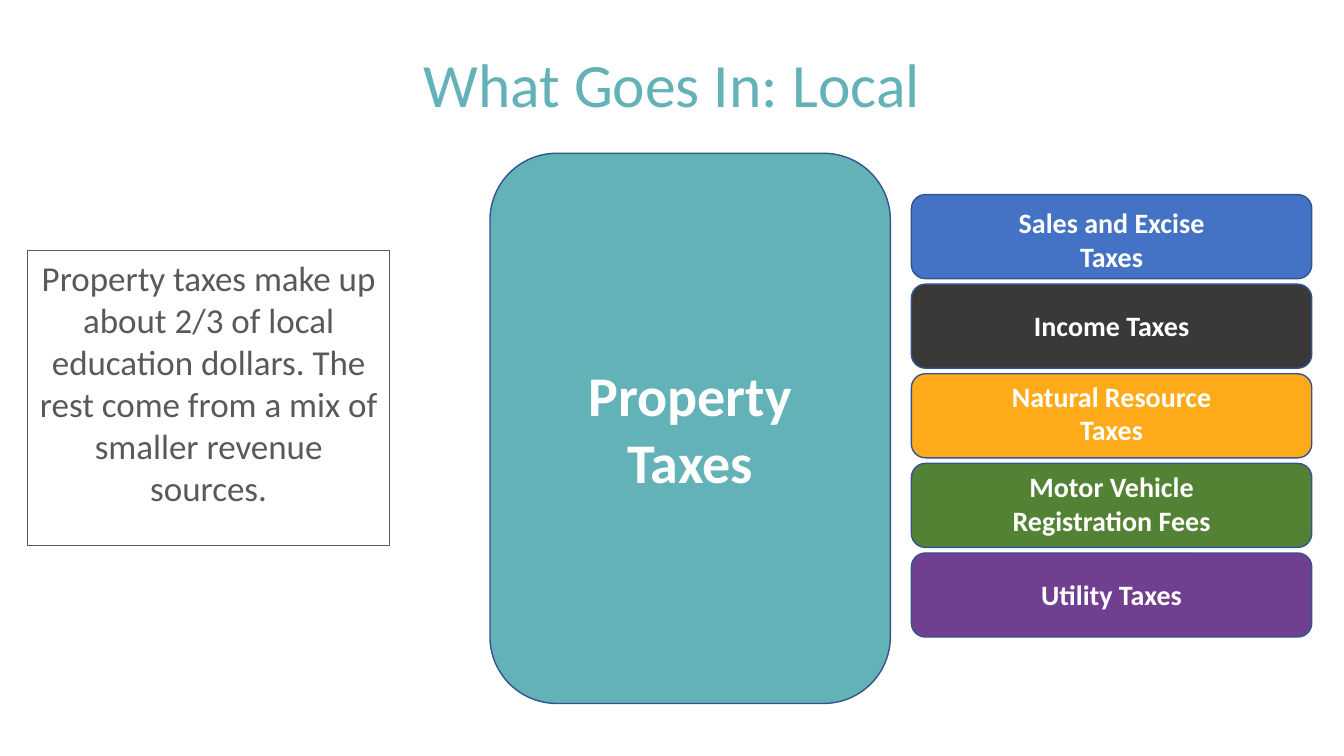
from dataclasses import dataclass

from pptx import Presentation
from pptx.dml.color import RGBColor
from pptx.enum.shapes import MSO_SHAPE
from pptx.enum.text import MSO_ANCHOR, MSO_AUTO_SIZE, PP_ALIGN
from pptx.util import Pt

CENTER = PP_ALIGN.CENTER
MIDDLE = MSO_ANCHOR.MIDDLE
FIT_SHAPE = MSO_AUTO_SIZE.SHAPE_TO_FIT_TEXT
NO_FIT = MSO_AUTO_SIZE.NONE
RECTANGLE = MSO_SHAPE.RECTANGLE
ROUNDED = MSO_SHAPE.ROUNDED_RECTANGLE
TITLE_ONLY = 5


@dataclass(frozen=True)
class Theme:
    font: str = "Calibri"
    teal: str = "63B2B8"
    blue: str = "4472C4"
    charcoal: str = "3B3838"
    amber: str = "FFAA19"
    green: str = "548235"
    purple: str = "703F8F"
    outline: str = "325491"
    gray: str = "595959"
    white: str = "FFFFFF"
    title_size: float = 44
    panel_size: float = 40
    note_size: float = 25
    card_size: float = 20


class SlideBuilder:
    def __init__(self, slide, theme):
        self.slide = slide
        self.theme = theme

    def set_text(self, frame, text, size, color, bold=False):
        frame.word_wrap = True
        para = frame.paragraphs[0]
        para.text = text
        para.alignment = CENTER
        para.font.name = self.theme.font
        para.font.size = Pt(size)
        para.font.bold = bold
        para.font.color.rgb = RGBColor.from_string(color)
        return para

    def title(self, text, left, top, width, height):
        box = self.slide.shapes.title
        box.left, box.top, box.width, box.height = map(Pt, (left, top, width, height))
        frame = box.text_frame
        frame.auto_size = NO_FIT
        frame.vertical_anchor = MIDDLE
        para = self.set_text(frame, text, self.theme.title_size, self.theme.teal)
        para.line_spacing = 0.9

    def block(self, kind, left, top, width, height, line, line_width, fill=None):
        shape = self.slide.shapes.add_shape(kind, *map(Pt, (left, top, width, height)))
        shape.shadow.inherit = False
        if fill:
            shape.fill.solid()
            shape.fill.fore_color.rgb = RGBColor.from_string(fill)
        else:
            shape.fill.background()
        shape.line.color.rgb = RGBColor.from_string(line)
        shape.line.width = Pt(line_width)
        return shape

    def label(self, text, center_x, center_y, width, height, size):
        left, top = center_x - width / 2, center_y - height / 2
        box = self.slide.shapes.add_textbox(*map(Pt, (left, top, width, height)))
        box.text_frame.auto_size = FIT_SHAPE
        self.set_text(box.text_frame, text, size, self.theme.white, bold=True)

    def card(self, text, left, top, width, height, fill, size,
             label_width, label_height, nudge=0):
        self.block(ROUNDED, left, top, width, height, self.theme.outline, 1, fill)
        self.label(text, left + width / 2, top + height / 2 + nudge,
                   label_width, label_height, size)

    def note(self, text, left, top, width, height):
        box = self.block(RECTANGLE, left, top, width, height, self.theme.gray, 0.75)
        frame = box.text_frame
        frame.vertical_anchor = MIDDLE
        frame.margin_left = frame.margin_right = Pt(7.2)
        frame.margin_top, frame.margin_bottom = Pt(3.6), Pt(25.6)
        self.set_text(frame, text, self.theme.note_size, self.theme.gray)


def main():
    theme = Theme()
    deck = Presentation()
    deck.slide_width, deck.slide_height = Pt(960), Pt(540)
    page = SlideBuilder(deck.slides.add_slide(deck.slide_layouts[TITLE_ONLY]), theme)

    page.title("What Goes In: Local", 0, 16, 960, 93.5)

    # Main revenue source
    card_width = 286
    page.card("Property Taxes", 350, 109.5, card_width, 393, theme.teal,
              theme.panel_size, label_width=173, label_height=104.4)

    # Smaller sources: text, fill, label width, label height, vertical nudge
    one_line, two_lines = 31.7, 55.4
    sources = [
        ("Sales and Excise Taxes", theme.blue, 173, two_lines, 2),
        ("Income Taxes", theme.charcoal, 173, one_line, 0),
        ("Natural Resource Taxes", theme.amber, 173, two_lines, -2),
        ("Motor Vehicle Registration Fees", theme.green, 227, two_lines, -1.5),
        ("Utility Taxes", theme.purple, 173, one_line, 0),
    ]
    first_top, pitch = 139, 64
    for row, (text, fill, label_width, label_height, nudge) in enumerate(sources):
        page.card(text, 651, first_top + row * pitch, card_width, 60, fill,
                  theme.card_size, label_width, label_height, nudge)

    # Explanation
    page.note("Property taxes make up about 2/3 of local education dollars. "
              "The rest come from a mix of smaller revenue sources.",
              20, 179, 258, 211)

    deck.save("out.pptx")


if __name__ == "__main__":
    main()
